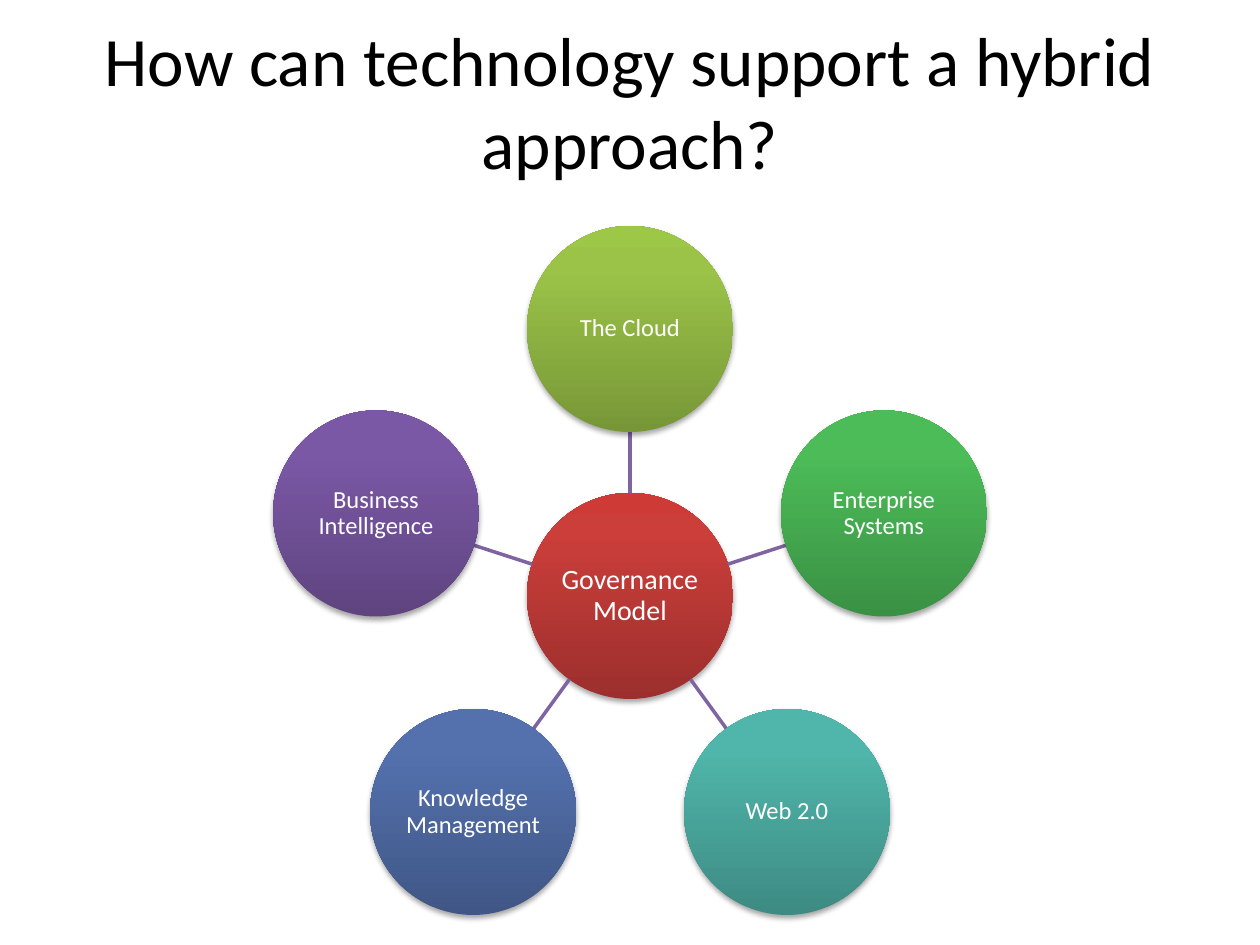
from copy import deepcopy
from math import cos, radians, sin

from pptx import Presentation
from pptx.dml.color import RGBColor
from pptx.enum.shapes import MSO_CONNECTOR, MSO_SHAPE
from pptx.enum.text import MSO_ANCHOR, PP_ALIGN
from pptx.oxml import parse_xml
from pptx.oxml.ns import nsdecls, qn
from pptx.util import Emu, Pt

PX = 914400 // 126
HUB = (630, 596)
RADIUS = 103
ORBIT = 267
STOPS = (0, 0.8, 1)
SHADOW = (
    f'<a:outerShdw {nsdecls("a")} blurRad="40000" dist="23000" dir="5400000" rotWithShape="0">'
    '<a:srgbClr val="000000"><a:alpha val="35000"/></a:srgbClr></a:outerShdw>'
)
CENTER = ("Governance Model", ("9C2F2D", "CB3E3A", "CE3B37"))
# Clockwise from the top
TOPICS = [
    ("The Cloud", ("779737", "9BC348", "9DC746")),
    ("Enterprise Systems", ("3A9144", "4CBC58", "4ABF57")),
    ("Web 2.0", ("3D8B83", "50B5AA", "4EB8AC")),
    ("Knowledge Management", ("405786", "5471AE", "5271B0")),
    ("Business Intelligence", ("5F4480", "7B58A6", "7C57A8")),
]


def px(num):
    return Emu(round(num * PX))


def color(code):
    return RGBColor.from_string(code)


def apply(item, values):
    for name, value in values.items():
        setattr(item, name, value)


def write(shape, text, size, ink, frame, para):
    box = shape.text_frame
    box.text = text
    apply(box, {"word_wrap": True, "vertical_anchor": MSO_ANCHOR.MIDDLE, **frame})
    line = box.paragraphs[0]
    apply(line, {"alignment": PP_ALIGN.CENTER, **para})
    apply(line.font, {"name": "Calibri", "size": Pt(size)})
    line.font.color.rgb = color(ink)


def add_title(slide, text):
    title = slide.shapes.title
    apply(title, {"left": px(63), "top": px(21), "width": px(1134), "height": px(158)})
    write(title, text, 39.6, "000000", {}, {})


def shade(shape, codes):
    """Fill with a gradient that runs from bottom to top."""
    fill = shape.fill
    fill.gradient()
    fill.gradient_angle = 90
    stops = next(shape.element.iter(qn("a:gsLst")))
    stops.append(deepcopy(stops[-1]))
    for stop, place, code in zip(fill.gradient_stops, STOPS, codes):
        stop.position = place
        stop.color.rgb = color(code)


def add_circle(slide, spot, text, codes, size):
    left, top = (px(mid - RADIUS) for mid in spot)
    shape = slide.shapes.add_shape(MSO_SHAPE.OVAL, left, top, px(2 * RADIUS), px(2 * RADIUS))
    shade(shape, codes)
    shape.line.fill.background()
    shape.shadow.inherit = False
    shape.element.spPr.find(qn("a:effectLst")).append(parse_xml(SHADOW))
    sides = ("left", "top", "right", "bottom")
    frame = {f"margin_{side}": px(1) for side in sides}
    write(shape, text, size, "FFFFFF", frame, {"line_spacing": 0.9})


def polar(angle, reach):
    turn = radians(angle)
    return HUB[0] + reach * cos(turn), HUB[1] + reach * sin(turn)


def add_spoke(slide, angle):
    ends = polar(angle, RADIUS) + polar(angle, ORBIT - RADIUS)
    spoke = slide.shapes.add_connector(MSO_CONNECTOR.STRAIGHT, *map(px, ends))
    spoke.line.color.rgb = color("8064A2")
    spoke.line.width = Pt(2)
    spoke.element.spPr.append(parse_xml(f'<a:effectLst {nsdecls("a")}/>'))


def main():
    deck = Presentation()
    apply(deck, {"slide_width": px(1260), "slide_height": px(945)})
    slide = deck.slides.add_slide(deck.slide_layouts[5])
    add_title(slide, "How can technology support a hybrid approach?")
    add_circle(slide, HUB, *CENTER, 16)
    for index, (text, codes) in enumerate(TOPICS):
        angle = index * 360 / len(TOPICS) - 90
        add_spoke(slide, angle)
        add_circle(slide, polar(angle, ORBIT), text, codes, 14)
    deck.save("out.pptx")


if __name__ == "__main__":
    main()
